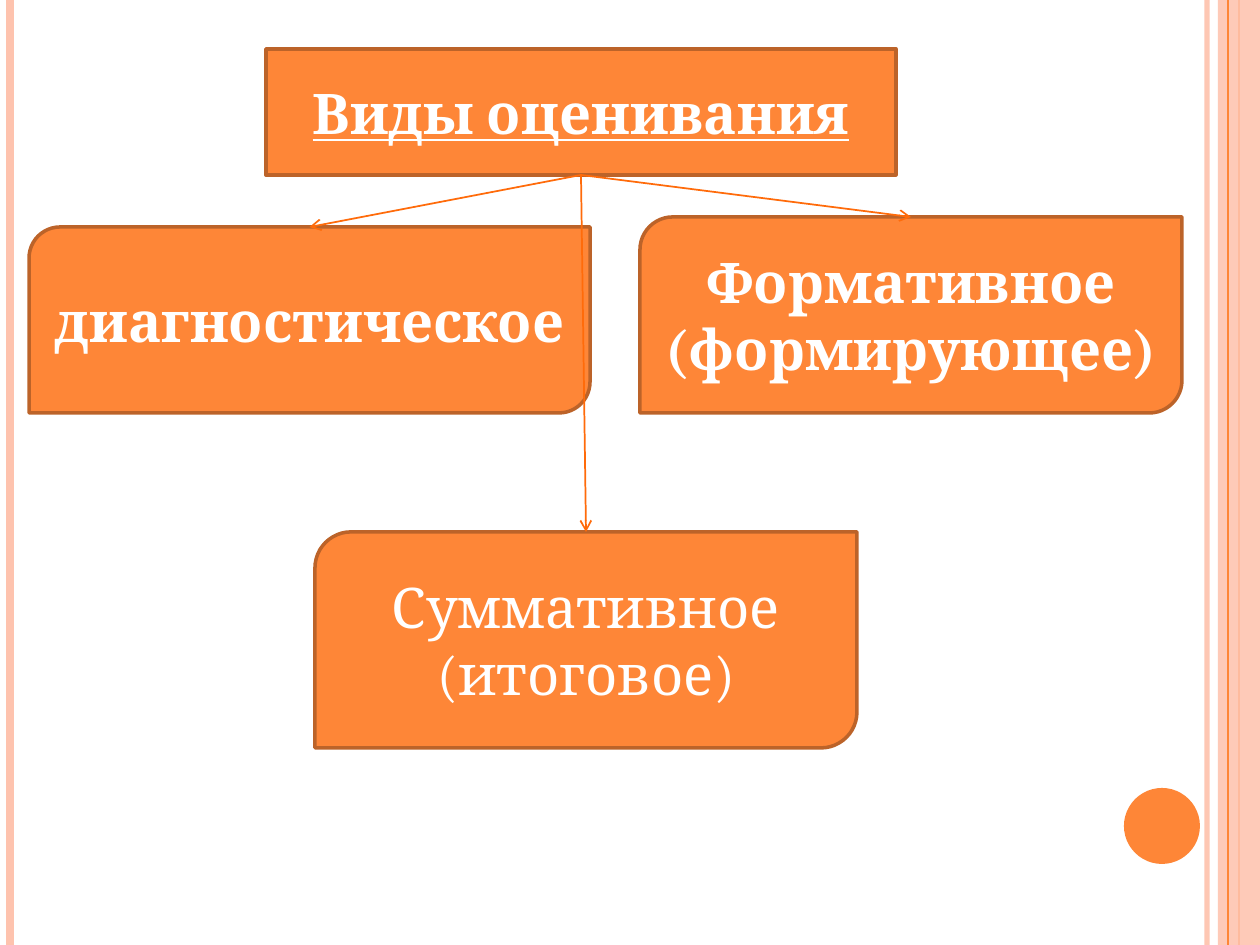
from dataclasses import dataclass

from lxml.etree import SubElement
from pptx import Presentation
from pptx.dml.color import RGBColor
from pptx.enum.shapes import MSO_CONNECTOR as Connector, MSO_SHAPE as Shape
from pptx.enum.text import MSO_ANCHOR as Anchor, PP_ALIGN as Align
from pptx.oxml.ns import qn
from pptx.util import Pt


@dataclass(frozen=True)
class Theme:
    accent: str = "FE8637"
    pale: str = "FEC3AE"
    border: str = "BC6329"
    arrow: str = "FF6B0A"
    text: str = "FFFFFF"
    font: str = "Cambria"
    size: int = 32
    border_width: float = 2
    arrow_width: float = 1


THEME = Theme()
SCALE = 914400 / 126
WIDTH, HEIGHT = 1260, 945

LEFT_STRIPES = [
    (1207, THEME.pale, 3, 93),
    (10, THEME.pale, 4.5, 100),
    (1239, THEME.accent, 1.5, 100),
]
BAND = (1218, 0, 42, HEIGHT)
BAND_OPACITY = 87
BAND_STRIPE = (1228, THEME.accent, 0.75, 100)
DOT = (1124, 788, 76, 76)

TITLE = (["Виды оценивания"], (266, 49, 630, 126), Shape.RECTANGLE,
         {"bold": True, "underline": True})
KINDS = [
    (["диагностическое"], (29, 227, 561, 186), {"bold": True}),
    (["Формативное", "(формирующее)"], (640, 217, 542, 196), {"bold": True}),
    (["Суммативное", "(итоговое)"], (315, 532, 542, 216), {"bold": False}),
]


def px(value):
    return round(value * SCALE)


def set_color(color_format, parent, color, opacity=100):
    color_format.rgb = RGBColor.from_string(color)
    if opacity < 100:
        swatch = next(parent.iter(qn("a:srgbClr")))
        SubElement(swatch, qn("a:alpha"), val=str(opacity * 1000))


def add_line(slide, start, end, color, width, opacity=100):
    line = slide.shapes.add_connector(
        Connector.STRAIGHT, *(px(value) for value in (*start, *end)))
    line.line.width = Pt(width)
    set_color(line.line.color, line.line._get_or_add_ln(), color, opacity)
    SubElement(line._element.spPr, qn("a:effectLst"))
    return line


def add_stripe(slide, x, color, width, opacity):
    add_line(slide, (x, 0), (x, HEIGHT), color, width, opacity)


def add_filled(slide, kind, box, color, opacity=100):
    shape = slide.shapes.add_shape(kind, *(px(value) for value in box))
    shape.shadow.inherit = False
    shape.fill.solid()
    set_color(shape.fill.fore_color, shape._element.spPr, color, opacity)
    shape.line.fill.background()
    return shape


def add_card(slide, lines, box, kind, style):
    card = add_filled(slide, kind, box, THEME.accent)
    card.line.color.rgb = RGBColor.from_string(THEME.border)
    card.line.width = Pt(THEME.border_width)
    frame = card.text_frame
    frame.word_wrap = True
    frame.vertical_anchor = Anchor.MIDDLE
    font_values = {"name": THEME.font, "size": Pt(THEME.size), **style}
    for index, words in enumerate(lines):
        paragraph = frame.add_paragraph() if index else frame.paragraphs[0]
        paragraph.alignment = Align.CENTER
        run = paragraph.add_run()
        run.text = words
        run.font.color.rgb = RGBColor.from_string(THEME.text)
        for attribute, value in font_values.items():
            setattr(run.font, attribute, value)


def add_arrow(slide, source, target):
    left, top, width, height = source
    start = (left + width / 2, top + height)
    left, top, width, height = target
    end = (left + width / 2, top)
    arrow = add_line(slide, start, end, THEME.arrow, THEME.arrow_width)
    SubElement(arrow.line._get_or_add_ln(), qn("a:tailEnd"), type="arrow")


def main():
    deck = Presentation()
    deck.slide_width, deck.slide_height = px(WIDTH), px(HEIGHT)
    slide = deck.slides.add_slide(deck.slide_layouts[6])

    for stripe in LEFT_STRIPES:
        add_stripe(slide, *stripe)
    add_filled(slide, Shape.RECTANGLE, BAND, THEME.pale, BAND_OPACITY)
    add_stripe(slide, *BAND_STRIPE)
    add_filled(slide, Shape.OVAL, DOT, THEME.accent)

    add_card(slide, *TITLE)
    for lines, box, style in KINDS:
        add_card(slide, lines, box, Shape.ROUND_2_DIAG_RECTANGLE, style)
    for _, box, _ in KINDS:
        add_arrow(slide, TITLE[1], box)

    deck.save("out.pptx")


if __name__ == "__main__":
    main()
